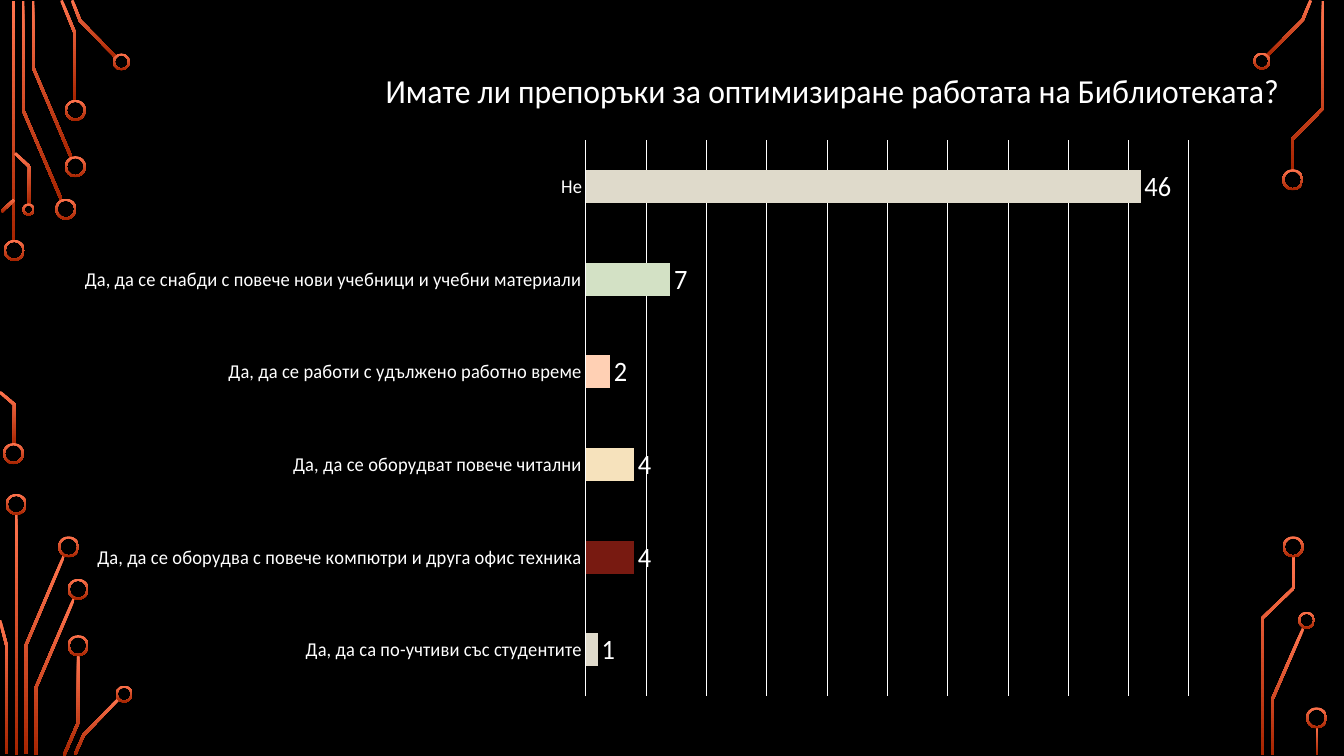
"""Build a slide with a survey bar chart framed by circuit traces."""
from dataclasses import dataclass
from math import hypot

from lxml import etree
from pptx import Presentation
from pptx.chart.data import CategoryChartData
from pptx.dml.color import RGBColor
from pptx.enum.chart import XL_CHART_TYPE, XL_LABEL_POSITION, XL_TICK_LABEL_POSITION, XL_TICK_MARK
from pptx.enum.shapes import MSO_SHAPE
from pptx.oxml import parse_xml
from pptx.oxml.ns import nsdecls, qn
from pptx.util import Cm, Pt

DONUT = MSO_SHAPE.DONUT
BAR = XL_CHART_TYPE.BAR_CLUSTERED
OUTSIDE_END = XL_LABEL_POSITION.OUTSIDE_END
NEXT_TO_AXIS = XL_TICK_LABEL_POSITION.NEXT_TO_AXIS
NO_TICK = XL_TICK_MARK.NONE

BLACK = RGBColor(0x00, 0x00, 0x00)
WHITE = RGBColor(0xFF, 0xFF, 0xFF)
GLOW = RGBColor(0xFF, 0x74, 0x4E)
EMBER = RGBColor(0xA6, 0x24, 0x00)
SAND = RGBColor(0xDF, 0xDA, 0xCB)
MAROON = RGBColor(0x78, 0x1A, 0x11)
CREAM = RGBColor(0xF6, 0xE2, 0xBC)
PEACH = RGBColor(0xFF, 0xD0, 0xB4)
SAGE = RGBColor(0xD3, 0xE1, 0xC5)

FONT = "Calibri"
TRACE_WIDTH = 0.07
RING_WALL = 0.05
QUESTION = "Имате ли препоръки за оптимизиране работата на Библиотеката?"


@dataclass(frozen=True)
class Ring:
    x: float
    y: float
    diameter: float = 0.53


@dataclass(frozen=True)
class Trace:
    points: tuple[tuple[float, float], ...]


@dataclass(frozen=True)
class Answer:
    text: str
    votes: int
    color: RGBColor


TRACES = [Trace(points) for points in (
    ((0.34, 0.03), (0.34, 6.1)),
    ((0.58, 0.03), (0.58, 2.77), (1.55, 5.04)),
    ((0.83, 0.03), (0.83, 1.69), (1.8, 3.98)),
    ((1.55, 0.01), (1.89, 0.84), (1.89, 2.54)),
    ((1.82, 0.01), (2.02, 0.52), (2.93, 1.45)),
    ((0.36, 5.03), (0.04, 5.33)),
    ((0, 9.88), (0.36, 10.19), (0.36, 11.2)),
    ((0.38, 3.86), (0.74, 4.2), (0.74, 5.16)),
    ((0.41, 12.95), (0.41, 19.02)),
    ((1.61, 14.01), (0.65, 16.27), (0.65, 19)),
    ((0, 15.63), (0.17, 16.28), (0.17, 19)),
    ((1.87, 15.07), (0.9, 17.34), (0.9, 19.02)),
    ((1.97, 16.51), (1.97, 18.21), (1.61, 19.04)),
    ((3, 17.6), (2.11, 18.52), (1.89, 19.01)),
    ((33.03, 0.01), (32.83, 0.5), (31.93, 1.41)),
    ((33.34, 0.03), (33.34, 2.73), (32.56, 3.52), (32.56, 4.29)),
    ((32.84, 15.84), (32.07, 17.61), (32.07, 19.02)),
    ((32.6, 14.02), (32.6, 14.82), (31.81, 15.58), (31.81, 19.02)),
    ((33.19, 18.31), (33.19, 19.02)),
)]

RINGS = [
    Ring(0.36, 6.31), Ring(0.34, 11.43), Ring(1.66, 5.27), Ring(1.9, 4.2),
    Ring(1.9, 2.78), Ring(3.06, 1.56, 0.43), Ring(0.72, 5.28, 0.31),
    Ring(0.41, 12.71), Ring(1.73, 13.78), Ring(1.97, 14.85),
    Ring(1.97, 16.27), Ring(3.13, 17.49, 0.43), Ring(31.8, 1.54, 0.43),
    Ring(32.58, 4.53), Ring(32.93, 15.63, 0.43), Ring(32.59, 13.78),
    Ring(33.18, 18.09),
]

ANSWERS = [
    Answer("Да, да са по-учтиви със студентите", 1, SAND),
    Answer("Да, да се оборудва с повече компютри и друга офис техника", 4, MAROON),
    Answer("Да, да се оборудват повече читални", 4, CREAM),
    Answer("Да, да се работи с удължено работно време", 2, PEACH),
    Answer("Да, да се снабди с повече нови учебници и учебни материали", 7, SAGE),
    Answer("Не", 46, SAND),
]


def style_font(font, size: float, color: RGBColor = WHITE) -> None:
    font.name, font.size, font.bold = FONT, Pt(size), False
    font.color.rgb = color


def write_text(frame, text: str, *, size: float, color: RGBColor = WHITE) -> None:
    run = frame.paragraphs[0].add_run()
    run.text = text
    style_font(run.font, size, color)


def paint_copper(shape) -> None:
    shape.shadow.inherit = False
    shape.line.fill.background()
    shape.fill.gradient()
    shape.fill.gradient_angle = 270
    for stop, color, position in zip(shape.fill.gradient_stops, (GLOW, EMBER), (0, 1)):
        stop.color.rgb = color
        stop.position = position


def trace_outline(points: tuple[tuple[float, float], ...]) -> list[tuple[int, int]]:
    normals = []
    for (x1, y1), (x2, y2) in zip(points, points[1:]):
        length = hypot(x2 - x1, y2 - y1)
        normals.append(((y1 - y2) / length, (x2 - x1) / length))
    left, right = [], []
    for (x, y), (ax, ay), (bx, by) in zip(points, normals[:1] + normals, normals + normals[-1:]):
        reach = TRACE_WIDTH / 2 / (1 + ax * bx + ay * by)
        dx, dy = (ax + bx) * reach, (ay + by) * reach
        left.append((Cm(x + dx), Cm(y + dy)))
        right.append((Cm(x - dx), Cm(y - dy)))
    return left + right[::-1]


def draw_trace(shapes, trace: Trace) -> None:
    start, *rest = trace_outline(trace.points)
    builder = shapes.build_freeform(*start)
    builder.add_line_segments(rest)
    paint_copper(builder.convert_to_shape())


def draw_ring(shapes, ring: Ring) -> None:
    size, radius = Cm(ring.diameter), ring.diameter / 2
    donut = shapes.add_shape(DONUT, Cm(ring.x - radius), Cm(ring.y - radius), size, size)
    donut.adjustments[0] = RING_WALL / ring.diameter
    paint_copper(donut)


def place_part(part, index: int, **sizes) -> None:
    for old in part.findall(qn("c:layout")):
        part.remove(old)
    layout = parse_xml(f'<c:layout {nsdecls("c")}><c:manualLayout/></c:layout>')
    for tag, value in sizes.items():
        etree.SubElement(layout[0], qn(f"c:{tag}")).set("val", str(value))
    part.insert(index, layout)


def draw_survey(shapes) -> None:
    data = CategoryChartData()
    data.categories = [answer.text for answer in ANSWERS]
    data.add_series("Series 1", [answer.votes for answer in ANSWERS])
    chart = shapes.add_chart(BAR, Cm(1.6), Cm(1.45), Cm(30.78), Cm(16.41), data).chart
    chart.has_legend = False
    style_font(chart.font, 10)
    chart.has_title = True
    title = chart.chart_title
    write_text(title.text_frame, QUESTION, size=24)
    place_part(title._element, 1, xMode="edge", yMode="edge", x=0.275, y=0.006)

    space = chart._chartSpace
    body = space.find(qn("c:chart"))
    place_part(body.find(qn("c:plotArea")), 0, layoutTarget="inner", xMode="edge",
               yMode="edge", x=0.454, y=0.127, w=0.524, h=0.854)
    body.addnext(parse_xml(f'<c:spPr {nsdecls("c", "a")}><a:noFill/><a:ln><a:noFill/></a:ln></c:spPr>'))

    reasons, votes = chart.category_axis, chart.value_axis
    reasons.major_tick_mark = reasons.minor_tick_mark = NO_TICK
    reasons.tick_label_position = NEXT_TO_AXIS
    style_font(reasons.tick_labels.font, 14)
    votes.minimum_scale, votes.maximum_scale, votes.major_unit = 0, 50, 5
    votes.major_tick_mark = votes.minor_tick_mark = NO_TICK
    votes.has_major_gridlines = True
    votes.visible = False
    for line in (reasons.format.line, votes.major_gridlines.format.line):
        line.color.rgb = WHITE
        line.width = Pt(0.75)

    plot = chart.plots[0]
    plot.vary_by_categories = False
    plot.gap_width = 182
    series = plot.series[0]
    series.format.fill.solid()
    series.format.fill.fore_color.rgb = SAND
    for index, answer in enumerate(ANSWERS):
        if answer.color != SAND:
            fill = series.points[index].format.fill
            fill.solid()
            fill.fore_color.rgb = answer.color
    labels = series.data_labels
    labels.show_value = True
    labels.position = OUTSIDE_END
    style_font(labels.font, 20)


def main() -> None:
    deck = Presentation()
    deck.slide_width, deck.slide_height = Cm(33.87), Cm(19.05)
    slide = deck.slides.add_slide(deck.slide_layouts[6])
    slide.background.fill.solid()
    slide.background.fill.fore_color.rgb = BLACK
    for trace in TRACES:
        draw_trace(slide.shapes, trace)
    for ring in RINGS:
        draw_ring(slide.shapes, ring)
    draw_survey(slide.shapes)
    deck.save("out.pptx")


if __name__ == "__main__":
    main()
